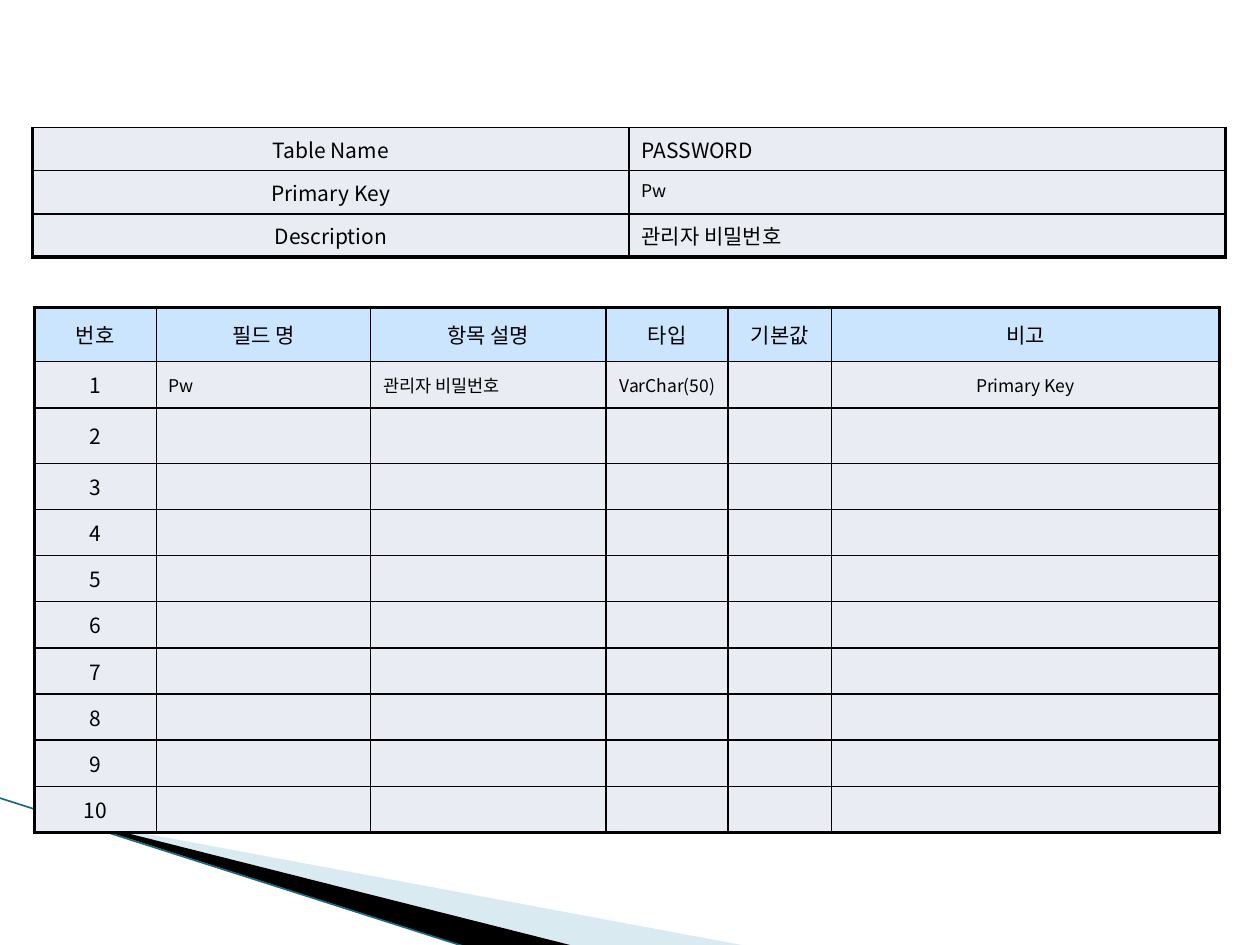
from dataclasses import dataclass

from lxml.etree import SubElement
from pptx import Presentation
from pptx.dml.color import RGBColor
from pptx.enum.shapes import MSO_CONNECTOR
from pptx.enum.text import MSO_ANCHOR, PP_ALIGN
from pptx.oxml.ns import qn
from pptx.util import Cm, Pt


@dataclass(frozen=True)
class Theme:
    font: str = "Noto Sans CJK KR"
    ink: str = "000000"
    header: str = "99CCFF"
    wedge: str = "A0CBDC"
    edge: str = "1B6A7E"
    label: int = 12
    detail: int = 10
    thin: float = 1
    thick: float = 2.25


THEME = Theme()
CENTER, LEFT = PP_ALIGN.CENTER, PP_ALIGN.LEFT


def set_fill(fill, color, opacity=100):
    fill.solid()
    fill.fore_color.rgb = RGBColor.from_string(color)
    if opacity < 100:
        clr = fill._xPr.find(qn("a:solidFill"))[0]
        SubElement(clr, qn("a:alpha"), val=str(opacity * 1000))


def set_borders(cell, widths):
    tc_pr = cell._tc.get_or_add_tcPr()
    for side, width in widths.items():
        ln = SubElement(tc_pr, qn(f"a:ln{side}"), w=str(Pt(width)))
        SubElement(SubElement(ln, qn("a:solidFill")), qn("a:srgbClr"), val=THEME.ink)


def write_cell(cell, text, size, align, anchor):
    cell.vertical_anchor = anchor
    p = cell.text_frame.paragraphs[0]
    p.alignment = align
    if not text:
        SubElement(p._p, qn("a:endParaRPr"), sz=str(size * 100))
        return
    r = p.add_run()
    r.text = text
    for name, value in {"name": THEME.font, "size": Pt(size), "bold": False}.items():
        setattr(r.font, name, value)
    r.font.color.rgb = RGBColor.from_string(THEME.ink)
    SubElement(r._r.get_or_add_rPr(), qn("a:ea"), typeface=THEME.font)


def add_grid(s, left, top, col_widths, row_heights):
    """Add an unstyled table with the given tracks in cm."""
    shape = s.shapes.add_table(len(row_heights), len(col_widths), Cm(left), Cm(top),
                               Cm(sum(col_widths)), Cm(sum(row_heights)))
    table = shape.table
    table.first_row = table.horz_banding = False
    for col, width in zip(table.columns, col_widths):
        col.width = Cm(width)
    for row, height in zip(table.rows, row_heights):
        row.height = Cm(height)
    return table


def add_summary(s, left, top, width):
    rows = [("Table Name", "PASSWORD", THEME.label),
            ("Primary Key", "Pw", THEME.detail),
            ("Description", "관리자 비밀번호", THEME.label)]
    table = add_grid(s, left, top, [width / 2] * 2, [0.87] * len(rows))
    for i, (label, value, size) in enumerate(rows):
        bottom = THEME.thick if i == len(rows) - 1 else THEME.thin
        name, content = table.cell(i, 0), table.cell(i, 1)
        write_cell(name, label, THEME.label, CENTER, MSO_ANCHOR.TOP)
        write_cell(content, value, size, LEFT, MSO_ANCHOR.TOP)
        set_borders(name, {"L": THEME.thick, "R": THEME.thin, "T": THEME.thin, "B": bottom})
        set_borders(content, {"L": THEME.thin, "R": THEME.thick, "T": THEME.thin, "B": bottom})


def add_fields(s, left, top):
    header = ["번호", "필드 명", "항목 설명", "타입", "기본값", "비고"]
    first = ["1", "Pw", "관리자 비밀번호", "VarChar(50)", "", "Primary Key"]
    rows = [header, first] + [[str(n)] + [""] * 5 for n in range(2, 11)]
    col_widths = [2.46, 4.32, 4.75, 2.46, 2.08, 7.82]
    row_heights = [1.09, 0.93, 1.12] + [0.93] * 8
    table = add_grid(s, left, top, col_widths, row_heights)
    last_row, last_col = len(rows) - 1, len(header) - 1
    for i, row in enumerate(rows):
        for j, text in enumerate(row):
            cell = table.cell(i, j)
            size = THEME.label if i == 0 or j == 0 else THEME.detail
            align = LEFT if i > 0 and j in (1, 2) else CENTER
            write_cell(cell, text, size, align, MSO_ANCHOR.MIDDLE)
            outer = {"L": j == 0, "R": j == last_col, "T": i == 0, "B": i == last_row}
            set_borders(cell, {side: THEME.thick if edge else THEME.thin
                               for side, edge in outer.items()})
            if i == 0:
                set_fill(cell.fill, THEME.header, 50)


def add_wedge(s, left, top, points, color, opacity=100):
    (x0, y0), *rest = [(Cm(left + x), Cm(top + y)) for x, y in points]
    builder = s.shapes.build_freeform(x0, y0)
    builder.add_line_segments(rest, close=True)
    sp = builder.convert_to_shape()
    sp.shadow.inherit = False
    set_fill(sp.fill, color, opacity)
    sp.line.fill.background()


def add_corner(s, left, top):
    """Draw the sweeping wedges and edge line of the lower left corner."""
    add_wedge(s, left, top, [(1.4, 0.44), (15.11, 3), (11.58, 3), (1.4, 0.43)],
              THEME.wedge, 40)
    add_wedge(s, left, top, [(1.35, 0.41), (11.61, 3), (9.45, 3.02), (1.37, 0.43)],
              THEME.ink)
    line = s.shapes.add_connector(MSO_CONNECTOR.STRAIGHT, Cm(left - 0.03), Cm(top),
                                  Cm(left + 9.42), Cm(top + 3.02))
    line.line.color.rgb = RGBColor.from_string(THEME.edge)
    line.line.width = Pt(0.95)
    SubElement(line._element.spPr, qn("a:effectLst"))


def main():
    prs = Presentation()
    prs.slide_width, prs.slide_height = Cm(25.4), Cm(19.05)
    s = prs.slides.add_slide(prs.slide_layouts[6])
    add_corner(s, 0, 16.08)
    add_summary(s, 0.66, 2.57, 24.04)
    add_fields(s, 0.69, 6.2)
    prs.save("out.pptx")


if __name__ == "__main__":
    main()
